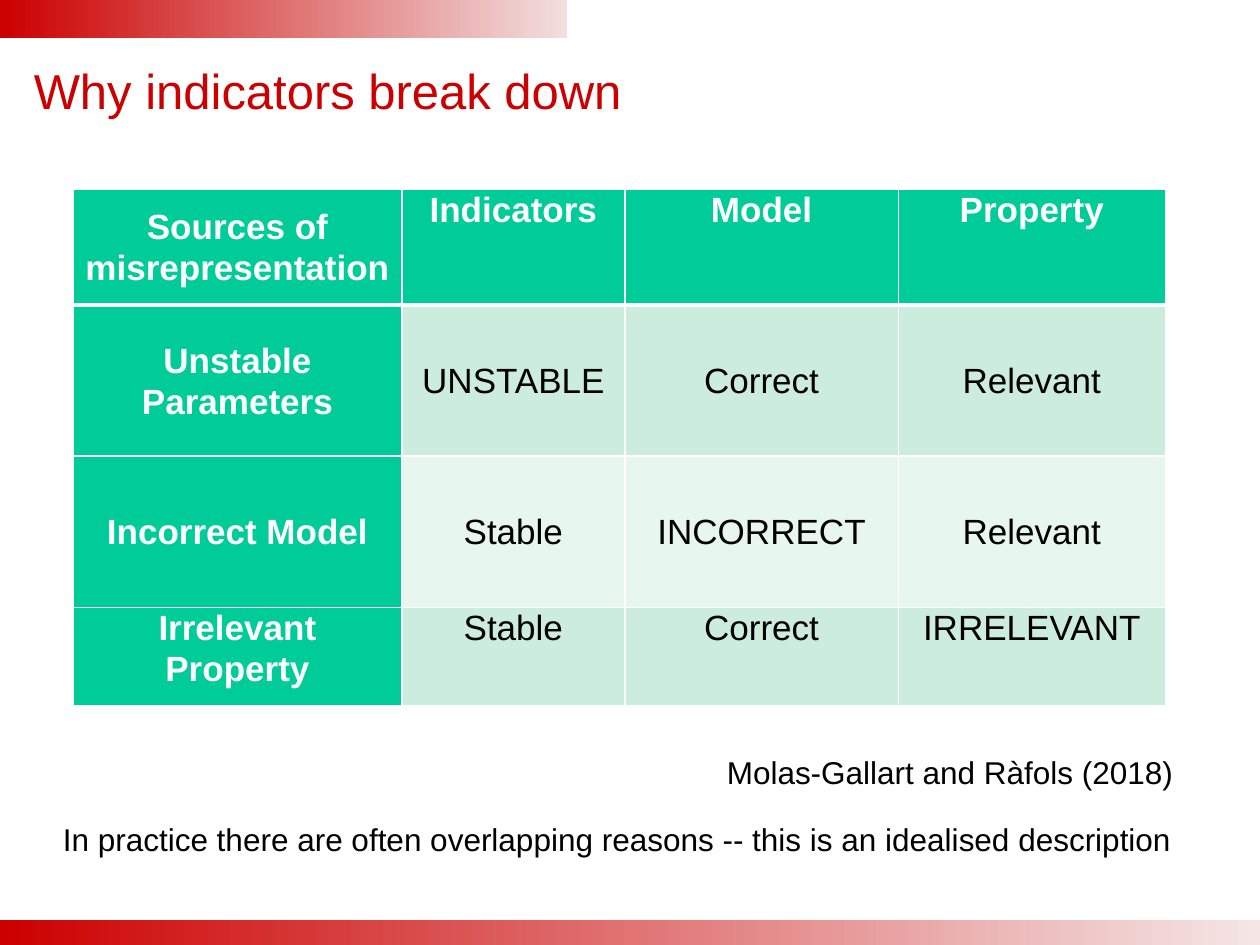
"""Build the slide on why indicators break down."""
from lxml import etree
from pptx import Presentation
from pptx.dml.color import RGBColor
from pptx.enum.shapes import MSO_SHAPE
from pptx.enum.text import MSO_ANCHOR, PP_ALIGN
from pptx.oxml.ns import qn
from pptx.util import Inches, Pt

RECT = MSO_SHAPE.RECTANGLE
TOP, MIDDLE = MSO_ANCHOR.TOP, MSO_ANCHOR.MIDDLE
CENTER = PP_ALIGN.CENTER

COLORS = {
    "red": "CC0000", "pale_red": "F5E6E6", "pale_rose": "F2DEDE",
    "green": "00CC99", "band": "CCECDE", "light_band": "E7F6EF",
    "white": "FFFFFF", "black": "000000",
}
BARS = [
    ((0, 7.3, 10, 0.2), "pale_red"),
    ((0, 0, 4.5, 0.3), "pale_rose"),
]
TEXTS = [
    ("Why indicators break down", (0.17, 0.25, 9.08, 0.92), 28, "red", MIDDLE, True),
    ("Molas-Gallart and Ràfols (2018)", (5.67, 5.93, 3.78, 0.4), 18, "black", TOP, False),
    ("In practice there are often overlapping reasons -- this is an idealised description",
     (0.4, 6.46, 9.08, 0.4), 18, "black", TOP, False),
]
ROWS = [
    ("Sources of misrepresentation", "Indicators", "Model", "Property"),
    ("Unstable Parameters", "UNSTABLE", "Correct", "Relevant"),
    ("Incorrect Model", "Stable", "INCORRECT", "Relevant"),
    ("Irrelevant Property", "Stable", "Correct", "IRRELEVANT"),
]
TABLE_LEFT, TABLE_TOP = 0.58, 1.5
COL_WIDTHS = [2.61, 1.77, 2.17, 2.12]
ROW_HEIGHTS = [0.92, 1.2, 1.2, 0.78]
CELL_FORMAT = {
    "margin_left": Inches(0.07), "margin_right": Inches(0.07),
    "margin_top": 0, "margin_bottom": 0,
}
PARAGRAPH_FORMAT = {"alignment": CENTER, "line_spacing": 1.05, "space_after": Pt(10)}


def rgb(name):
    return RGBColor.from_string(COLORS[name])


def set_attrs(obj, values):
    for name, value in values.items():
        setattr(obj, name, value)


def add_run(p, text, size, color, bold=False):
    r = p.add_run()
    r.text = text
    set_attrs(r.font, {"name": "Arial", "size": Pt(size), "bold": bold})
    r.font.color.rgb = rgb(color)


def add_bar(s, box, end_color):
    sp = s.shapes.add_shape(RECT, *map(Inches, box))
    sp.shadow.inherit = False
    sp.line.fill.background()
    sp.fill.gradient()
    sp.fill.gradient_angle = 0
    for stop, position, color in zip(sp.fill.gradient_stops, (0, 1), ("red", end_color)):
        stop.position = position
        stop.color.rgb = rgb(color)


def add_text(s, text, box, size, color, anchor, wrap):
    tf = s.shapes.add_textbox(*map(Inches, box)).text_frame
    set_attrs(tf, {"word_wrap": wrap, "vertical_anchor": anchor})
    add_run(tf.paragraphs[0], text, size, color)


def set_borders(cell, row):
    tc_pr = cell._tc.get_or_add_tcPr()
    widths = {"lnL": 1, "lnR": 1, "lnT": 3 if row == 1 else 1, "lnB": 3 if row == 0 else 1}
    for side, width in widths.items():
        ln = etree.SubElement(tc_pr, qn(f"a:{side}"), w=str(Pt(width)))
        fill = etree.SubElement(ln, qn("a:solidFill"))
        etree.SubElement(fill, qn("a:srgbClr"), val=COLORS["white"])


def format_cell(cell, text, row, col):
    is_header = row == 0 or col == 0
    is_middle = row in (1, 2) or row == col == 0
    set_attrs(cell, CELL_FORMAT)
    cell.vertical_anchor = MIDDLE if is_middle else TOP
    set_borders(cell, row)
    cell.fill.solid()
    band = "band" if row % 2 else "light_band"
    cell.fill.fore_color.rgb = rgb("green" if is_header else band)
    p = cell.text_frame.paragraphs[0]
    set_attrs(p, PARAGRAPH_FORMAT)
    add_run(p, text, 20, "white" if is_header else "black", is_header)


def add_sources_table(s):
    box = (TABLE_LEFT, TABLE_TOP, sum(COL_WIDTHS), sum(ROW_HEIGHTS))
    frame = s.shapes.add_table(len(ROWS), len(COL_WIDTHS), *map(Inches, box))
    table = frame.table
    for column, width in zip(table.columns, COL_WIDTHS):
        column.width = Inches(width)
    for row, height in zip(table.rows, ROW_HEIGHTS):
        row.height = Inches(height)
    for i, texts in enumerate(ROWS):
        for j, text in enumerate(texts):
            format_cell(table.cell(i, j), text, i, j)


def main():
    prs = Presentation()
    set_attrs(prs, {"slide_width": Inches(10), "slide_height": Inches(7.5)})
    s = prs.slides.add_slide(prs.slide_layouts[6])
    for bar in BARS:
        add_bar(s, *bar)
    title, *notes = TEXTS
    add_text(s, *title)
    add_sources_table(s)
    for note in notes:
        add_text(s, *note)
    prs.save("out.pptx")


if __name__ == "__main__":
    main()
